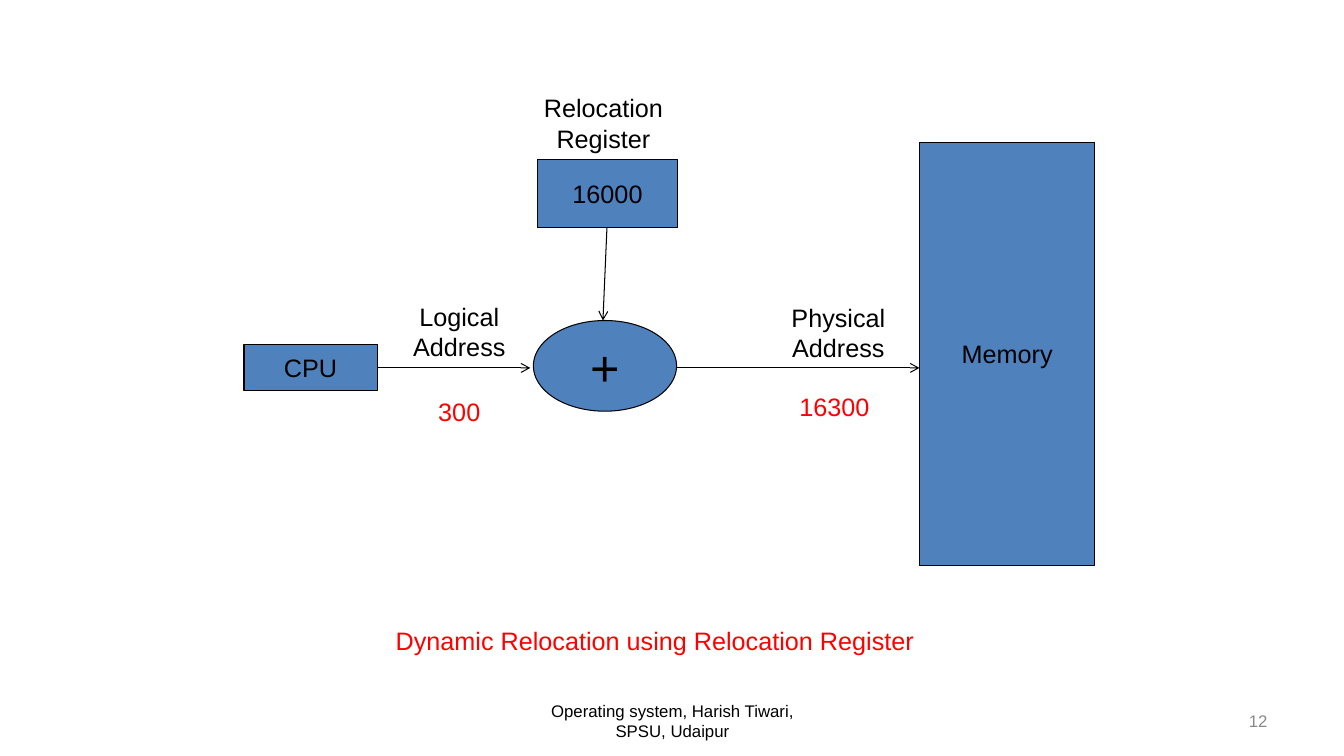
"""Build the slide that explains dynamic relocation with a relocation register."""
from dataclasses import dataclass

from lxml.etree import SubElement
from pptx import Presentation
from pptx.dml.color import RGBColor
from pptx.enum.shapes import MSO_CONNECTOR, MSO_SHAPE
from pptx.enum.text import MSO_ANCHOR, MSO_AUTO_SIZE, PP_ALIGN
from pptx.oxml.ns import qn
from pptx.shapes.autoshape import Shape
from pptx.slide import Slide
from pptx.text.text import TextFrame
from pptx.util import Emu, Pt

EMU_PER_PX = 9144


@dataclass(frozen=True)
class Theme:
    font: str = "Arial"
    ink: RGBColor = RGBColor(0x00, 0x00, 0x00)
    block: RGBColor = RGBColor(0x4F, 0x81, 0xBD)
    accent: RGBColor = RGBColor(0xFF, 0x00, 0x00)
    muted: RGBColor = RGBColor(0x89, 0x89, 0x89)
    body_size: int = 18
    symbol_size: int = 36
    footer_size: int = 12
    line_width: float = 0.75


THEME = Theme()


@dataclass(frozen=True)
class Box:
    left: int
    top: int
    width: int
    height: int


@dataclass(frozen=True)
class Block:
    text: str
    box: Box
    kind: MSO_SHAPE = MSO_SHAPE.RECTANGLE
    size: int = THEME.body_size


@dataclass(frozen=True)
class Label:
    text: str
    box: Box
    color: RGBColor = THEME.ink
    size: int = THEME.body_size
    align: PP_ALIGN = PP_ALIGN.CENTER
    anchor: MSO_ANCHOR = MSO_ANCHOR.TOP


@dataclass(frozen=True)
class Arrow:
    start: tuple[int, int]
    end: tuple[int, int]


CAPTION = Label("Dynamic Relocation using Relocation Register",
                Box(264, 615, 771, 40), THEME.accent)
BLOCKS = (
    Block("CPU", Box(242, 342, 132, 45)),
    Block("16000", Box(533, 158, 139, 68)),
    Block("Memory", Box(912, 141, 174, 420)),
    Block("+", Box(529, 318, 142, 90), MSO_SHAPE.OVAL, THEME.symbol_size),
)
ARROWS = (
    Arrow((374, 365), (526, 365)),
    Arrow((602, 226), (598, 318)),
    Arrow((671, 365), (912, 365)),
)
LABELS = (
    Label("Logical Address", Box(386, 294, 139, 71)),
    Label("Physical Address", Box(762, 295, 139, 71)),
    Label("Relocation\nRegister", Box(529, 87, 139, 71)),
    Label("300", Box(386, 388, 139, 40), THEME.accent),
    Label("16300", Box(758, 383, 139, 40), THEME.accent),
    Label("Operating system, Harish Tiwari,\nSPSU, Udaipur", Box(456, 695, 422, 40),
          size=THEME.footer_size, anchor=MSO_ANCHOR.MIDDLE),
    Label("12", Box(956, 695, 311, 40), THEME.muted, THEME.footer_size,
          PP_ALIGN.RIGHT, MSO_ANCHOR.MIDDLE),
)


def px(length: int) -> Emu:
    return Emu(length * EMU_PER_PX)


def place(box: Box) -> tuple[Emu, Emu, Emu, Emu]:
    return px(box.left), px(box.top), px(box.width), px(box.height)


def write_text(frame: TextFrame, text: str, *, size: int,
               color: RGBColor = THEME.ink, align: PP_ALIGN = PP_ALIGN.CENTER,
               anchor: MSO_ANCHOR = MSO_ANCHOR.MIDDLE, wrap: bool = True) -> None:
    frame.text = text
    frame.auto_size = MSO_AUTO_SIZE.NONE
    frame.word_wrap = wrap
    frame.vertical_anchor = anchor
    for paragraph in frame.paragraphs:
        paragraph.alignment = align
        font = paragraph.font
        font.name, font.size, font.color.rgb = THEME.font, Pt(size), color
        for run in paragraph.runs:
            run.font.name, run.font.size = THEME.font, Pt(size)
            run.font.color.rgb = color


def fill_label(shape: Shape, label: Label) -> None:
    shape.left, shape.top, shape.width, shape.height = place(label.box)
    write_text(shape.text_frame, label.text, size=label.size, color=label.color,
               align=label.align, anchor=label.anchor)


def add_label(slide: Slide, label: Label) -> None:
    fill_label(slide.shapes.add_textbox(*place(label.box)), label)


def add_block(slide: Slide, block: Block) -> None:
    shape = slide.shapes.add_shape(block.kind, *place(block.box))
    shape.shadow.inherit = False
    shape.fill.solid()
    shape.fill.fore_color.rgb = THEME.block
    shape.line.color.rgb = THEME.ink
    shape.line.width = Pt(THEME.line_width)
    write_text(shape.text_frame, block.text, size=block.size, wrap=False)


def add_arrow(slide: Slide, arrow: Arrow) -> None:
    connector = slide.shapes.add_connector(
        MSO_CONNECTOR.STRAIGHT, *map(px, arrow.start + arrow.end))
    connector.line.color.rgb = THEME.ink
    connector.line.width = Pt(THEME.line_width)
    SubElement(connector.line._get_or_add_ln(), qn("a:tailEnd"), type="arrow")
    SubElement(connector._element.spPr, qn("a:effectLst"))


def main() -> None:
    presentation = Presentation()
    presentation.slide_width, presentation.slide_height = px(1333), px(750)
    slide = presentation.slides.add_slide(presentation.slide_layouts[5])
    fill_label(slide.shapes.title, CAPTION)
    for block in BLOCKS:
        add_block(slide, block)
    for arrow in ARROWS:
        add_arrow(slide, arrow)
    for label in LABELS:
        add_label(slide, label)
    presentation.save("out.pptx")


if __name__ == "__main__":
    main()
